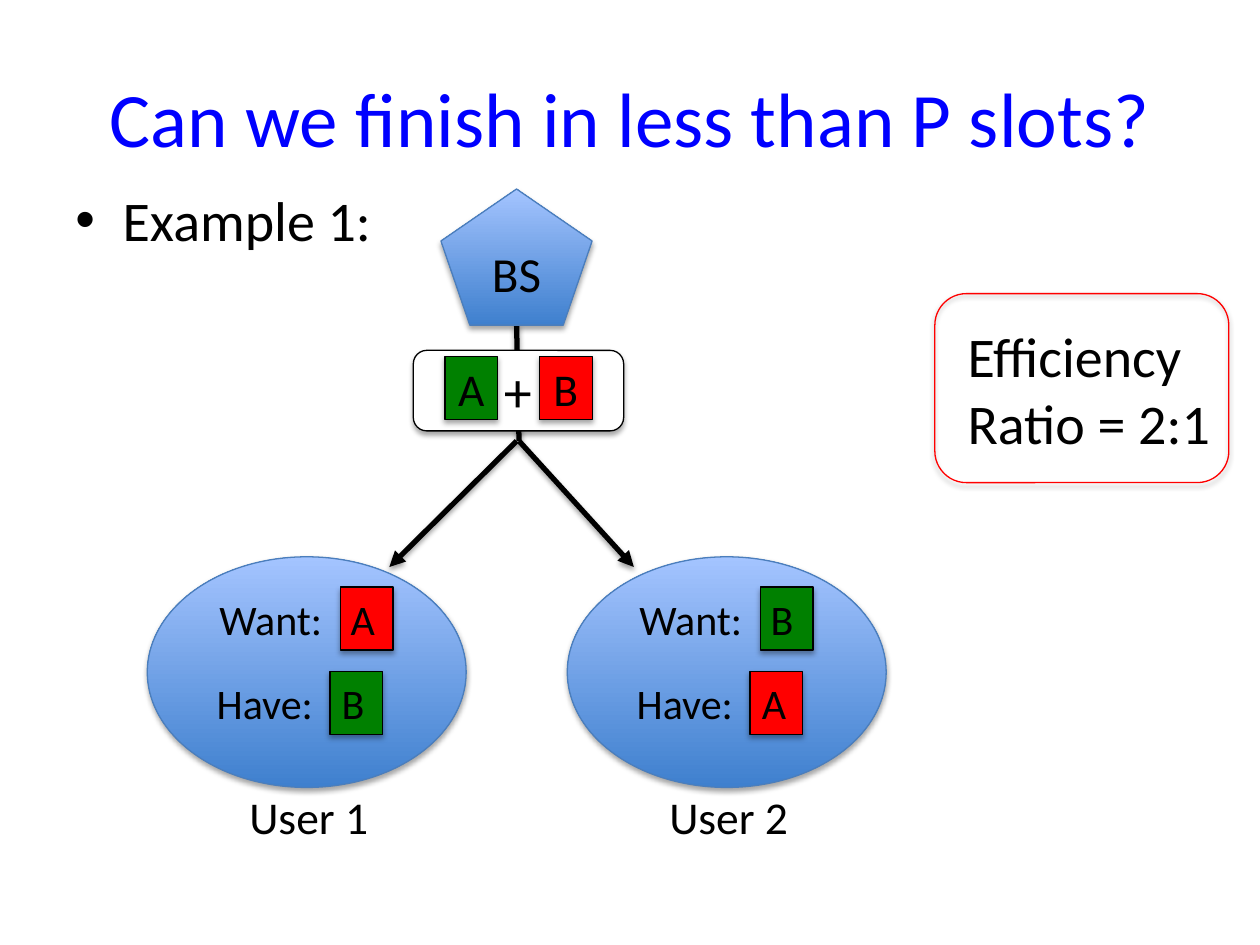
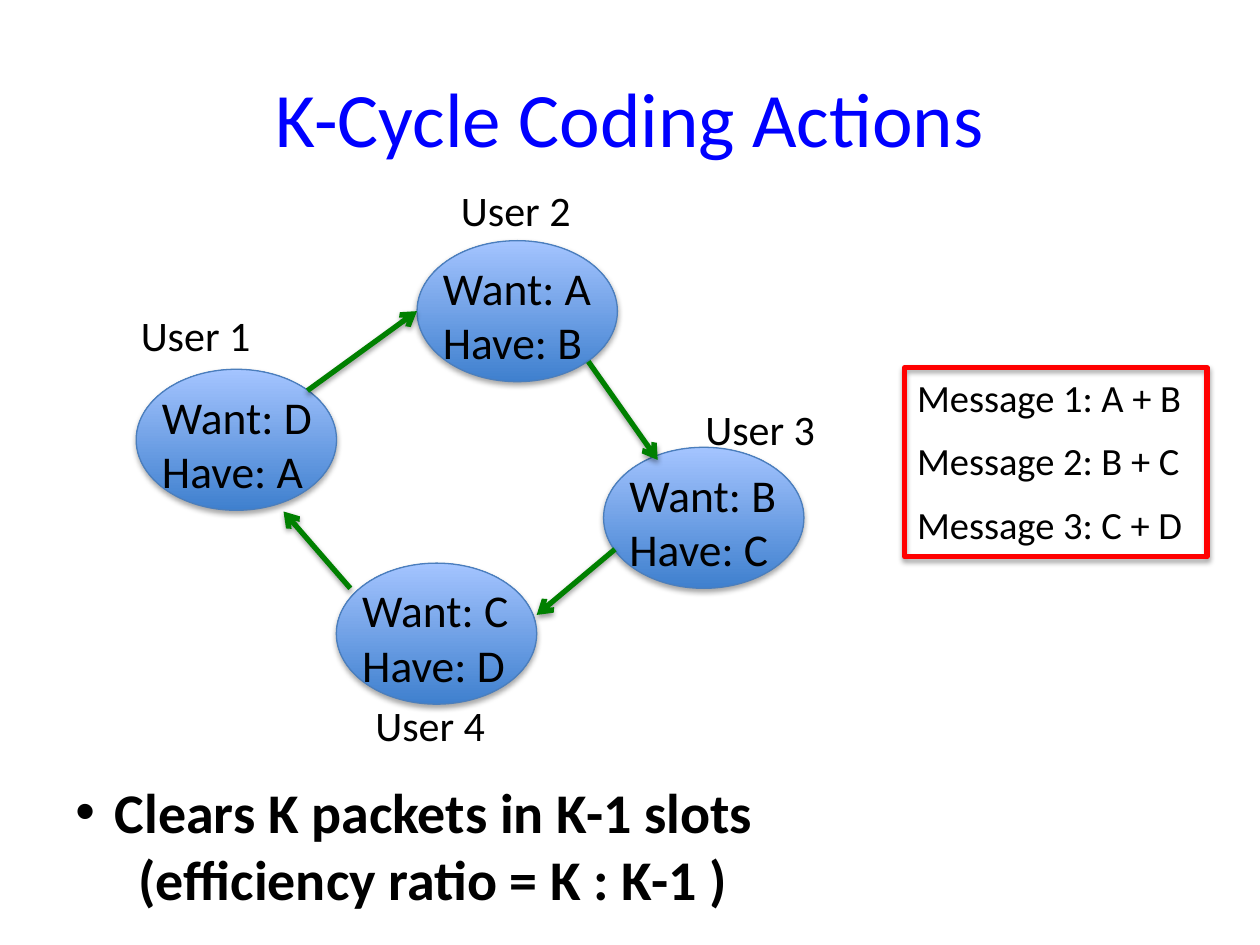
"""Build two slides on coded packet delivery: a two-user example and the K-cycle."""
from lxml import etree
from pptx import Presentation
from pptx.dml.color import RGBColor
from pptx.enum import shapes, text
from pptx.oxml import ns
from pptx.util import Pt

FONT = "Calibri"
BLACK, WHITE, BLUE = "000000", "FFFFFF", "0000FF"
RED, GREEN, EDGE = "FF0000", "008000", "4B7EBC"
GRADIENT = ["3F80CE", "A4C4FF"]
SHAPE, CENTER = shapes.MSO_SHAPE, text.PP_ALIGN.CENTER
TILE = (30.2, 36)


def add_box(page, place, lines=(), size=26, kind=None, fill=None, edge=BLACK,
            weight=0.75, color=BLACK, align=None, bold=False, gap=0):
    """Add a text box, or a shadowed shape of the given kind, with its lines."""
    place = [Pt(length) for length in place]
    if kind is None:
        box = page.shapes.add_textbox(*place)
    else:
        box = page.shapes.add_shape(kind, *place)
        box.line.color.rgb = RGBColor.from_string(edge)
        box.line.width = Pt(weight)
        if fill is GRADIENT:
            box.fill.gradient()
            box.fill.gradient_angle = 90
            for stop, shade in zip(box.fill.gradient_stops, GRADIENT):
                stop.color.rgb = RGBColor.from_string(shade)
        elif fill:
            box.fill.solid()
            box.fill.fore_color.rgb = RGBColor.from_string(fill)
        else:
            box.fill.background()
        add_shadow(box, 35, 1.8)
    frame = box.text_frame
    middle = text.MSO_ANCHOR.MIDDLE if align else text.MSO_ANCHOR.TOP
    formats = {"word_wrap": True, "vertical_anchor": middle, "margin_right": 0,
               "margin_left": 0 if align else Pt(7.2)}
    for name, value in formats.items():
        setattr(frame, name, value)
    for index, line in enumerate(lines):
        para = frame.add_paragraph() if index else frame.paragraphs[0]
        para.alignment = align or text.PP_ALIGN.LEFT
        if index and gap:
            para.space_before = Pt(gap)
        span = para.add_run()
        span.text = line
        for name, value in {"name": FONT, "size": Pt(size), "bold": bold}.items():
            setattr(span.font, name, value)
        span.font.color.rgb = RGBColor.from_string(color)
    return box


def add_shadow(item, opacity, distance):
    """Give a shape or connector a soft shadow straight below it."""
    effects = etree.SubElement(item._element.spPr, ns.qn("a:effectLst"))
    shadow = etree.SubElement(effects, ns.qn("a:outerShdw"), blurRad=str(Pt(3.1)),
                              dist=str(Pt(distance)), dir="5400000", rotWithShape="0")
    shade = etree.SubElement(shadow, ns.qn("a:srgbClr"), val=BLACK)
    etree.SubElement(shade, ns.qn("a:alpha"), val=str(opacity * 1000))


deck = Presentation()
deck.slide_width, deck.slide_height = Pt(720), Pt(540)
pages = []
for title in ["Can we finish in less than P slots?", "K-Cycle Coding Actions"]:
    page = deck.slides.add_slide(deck.slide_layouts[6])
    add_box(page, (36, 21.6, 648, 90), [title], 44, color=BLUE, align=CENTER)
    pages.append(page)
example, cycle = pages

links = [
    (example, (295.2, 185.8), (296.6, 252), BLACK, None),
    (example, (295.2, 252), (222.5, 324), BLACK, "triangle"),
    (example, (296.6, 252), (362.2, 324), BLACK, "triangle"),
    (cycle, (336.2, 206.6), (375.8, 262.8), GREEN, "arrow"),
    (cycle, (351.4, 313.9), (306.7, 351.4), GREEN, "arrow"),
    (cycle, (200.2, 336.2), (162, 292.3), GREEN, "arrow"),
    (cycle, (175.7, 223.2), (238.3, 177.8), GREEN, "arrow"),
]
arrows = []
for page, start, end, color, head in links:
    ends = [Pt(length) for length in start + end]
    link = page.shapes.add_connector(shapes.MSO_CONNECTOR.STRAIGHT, *ends)
    link.line.color.rgb = RGBColor.from_string(color)
    link.line.width = Pt(3)
    if head:
        etree.SubElement(link.line._get_or_add_ln(), ns.qn("a:tailEnd"), type=head)
    add_shadow(link, 38, 1.6)
    if page is cycle:
        arrows.append(link)

add_box(example, (252, 108, 86.4, 77.8), ["BS"], 28, SHAPE.REGULAR_PENTAGON,
        GRADIENT, EDGE, align=CENTER)
add_box(example, (236.2, 200.2, 120.2, 46), kind=SHAPE.ROUNDED_RECTANGLE, fill=WHITE)
add_box(example, (280.8, 200.2, 31, 46), ["+"], 32)
for left, packet, fill in [(254.2, "A", GREEN), (308.2, "B", RED)]:
    add_box(example, (left, 203.8, *TILE), [packet], 26, SHAPE.RECTANGLE, fill,
            align=CENTER)

requests = [[("A", RED), ("B", GREEN)], [("B", GREEN), ("A", RED)]]
rows = [("Want:", 335.5, 34, 110.2, 75), ("Have:", 383.8, 32.5, 104.4, 71.5)]
for number, packets in enumerate(requests):
    left = 84.2 + 240 * number
    add_box(example, (left, 318.2, 182.2, 131.8), kind=SHAPE.OVAL, fill=GRADIENT,
            edge=EDGE)
    for (label, top, indent, tile_indent, tab), (packet, fill) in zip(rows, packets):
        add_box(example, (left + tile_indent, top, *TILE), kind=SHAPE.RECTANGLE,
                fill=fill)
        box = add_box(example, (left + indent, top, 106, 36), [f"{label}\t{packet}"], 24)
        props = box.text_frame.paragraphs[0]._p.get_or_add_pPr()
        tabs = etree.SubElement(props, ns.qn("a:tabLst"))
        etree.SubElement(tabs, ns.qn("a:tab"), pos=str(Pt(tab)), algn="l")
    add_box(example, (left + 51.2, 447.1, 83, 39), [f"User {number + 1}"])

add_box(example, (545.8, 180, 159.8, 85), ["Efficiency Ratio = 2:1"], 32)
add_box(example, (534.2, 167.8, 168, 108), kind=SHAPE.ROUNDED_RECTANGLE, edge=RED)

users = [
    ("D", "A", (77.8, 211), (73.4, 173.5)),
    ("A", "B", (238.3, 137.5), (256.3, 102.2)),
    ("B", "C", (344.9, 255.6), (396, 226.8)),
    ("C", "D", (192.2, 321.8), (207.4, 396)),
]
for number, (want, have, (left, top), label_at) in enumerate(users, 1):
    add_box(cycle, (left, top, 114.5, 80.6), kind=SHAPE.OVAL, fill=GRADIENT, edge=EDGE)
    add_box(cycle, (left + 7.7, top + 7.5, 102, 70.6), [f"Want: {want}", f"Have: {have}"])
    add_box(cycle, (*label_at, 78, 36), [f"User {number}"], 24)
for arrow in arrows:
    cycle.shapes._spTree.append(arrow._element)

add_box(cycle, (517, 210.2, 172.8, 108), kind=SHAPE.RECTANGLE, edge=RED, weight=3)
messages = ["Message 1: A + B", "Message 2: B + C", "Message 3: C + D"]
add_box(cycle, (517, 210.2, 197.3, 106.6), messages, 22, gap=9.8)

topic = add_box(example, (36, 102.2, 669.6, 54), ["Example 1:"], 32)
result = add_box(cycle, (36, 440.6, 653.8, 85),
                 ["Clears K packets in K-1 slots", "(efficiency ratio = K : K-1 )"],
                 32, bold=True)
for box, indent in [(topic, 27), (result, 22.5)]:
    props = box.text_frame.paragraphs[0]._p.get_or_add_pPr()
    props.set("marL", str(Pt(indent)))
    props.set("indent", str(Pt(-indent)))
    etree.SubElement(props, ns.qn("a:buFont"), typeface="Arial")
    etree.SubElement(props, ns.qn("a:buChar"), char="•")
result.text_frame.paragraphs[1]._p.get_or_add_pPr().set("marL", str(Pt(36)))

deck.save("out.pptx")
